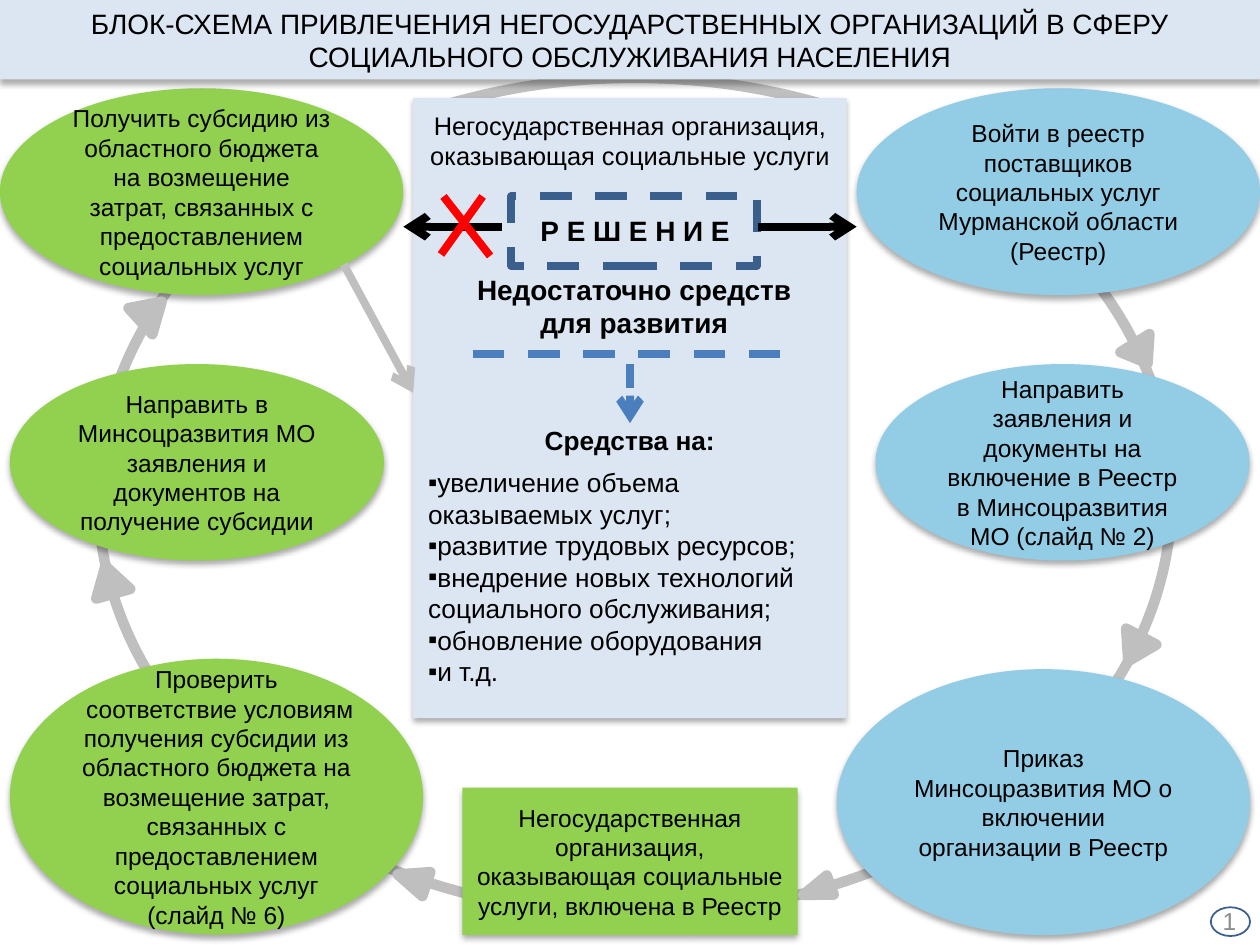
"""Build the flow chart slide on bringing non-state organisations into social services."""
from lxml import etree
from pptx import Presentation
from pptx.dml.color import RGBColor
from pptx.enum.dml import MSO_LINE
from pptx.enum.shapes import MSO_CONNECTOR, MSO_SHAPE
from pptx.enum.text import MSO_ANCHOR, PP_ALIGN
from pptx.oxml.ns import qn
from pptx.util import Cm, Pt

OVAL, RECTANGLE, TRIANGLE = MSO_SHAPE.OVAL, MSO_SHAPE.RECTANGLE, MSO_SHAPE.ISOSCELES_TRIANGLE
STRAIGHT = MSO_CONNECTOR.STRAIGHT
DASH, SHORT_DASH = MSO_LINE.DASH, MSO_LINE.SQUARE_DOT
LEFT, CENTER, RIGHT = PP_ALIGN.LEFT, PP_ALIGN.CENTER, PP_ALIGN.RIGHT
TOP, MIDDLE = MSO_ANCHOR.TOP, MSO_ANCHOR.MIDDLE

FONT = "Arial"
GREEN, SKY, PALE, GREY = "92D050", "93CCE5", "DCE6F2", "BFBFBF"
NAVY, BLUE, RED, BLACK, WHITE = "3A5F8C", "4B7EBC", "FF0000", "000000", "FFFFFF"
INSETS = (0.25, 0.13, 0.25, 0.13)
NARROW_INSETS = (0.1, 0.13, 0.1, 0.13)

TITLE = "БЛОК-СХЕМА ПРИВЛЕЧЕНИЯ НЕГОСУДАРСТВЕННЫХ ОРГАНИЗАЦИЙ В СФЕРУ СОЦИАЛЬНОГО ОБСЛУЖИВАНИЯ НАСЕЛЕНИЯ"
RING = (1.98, 1.57, 21.64, 16.87)
RING_GAPS = [(6.55, 1.98, 4.37, 2.18), (15.67, 1.98, 4.37, 2.18)]
STEPS = [
    (OVAL, (17.27, 1.78, 8.13, 4.17), SKY, INSETS,
     ["Войти в реестр поставщиков социальных услуг Мурманской области", "(Реестр)"]),
    (OVAL, (17.65, 7.34, 7.54, 3.96), SKY, INSETS,
     ["Направить заявления и документы на включение в Реестр в Минсоцразвития МО (слайд № 2)"]),
    (OVAL, (16.87, 13.49, 8.33, 5.36), SKY, INSETS,
     ["Приказ Минсоцразвития МО о включении организации в Реестр"]),
    (RECTANGLE, (9.32, 15.88, 6.76, 2.97), GREEN, INSETS,
     ["Негосударственная организация, оказывающая социальные услуги, включена в Реестр"]),
    (OVAL, (0.2, 13.28, 8.33, 5.56), GREEN, NARROW_INSETS,
     ["Проверить",
      " соответствие условиям получения субсидии из областного бюджета на возмещение затрат, "
      "связанных с предоставлением социальных услуг",
      "(слайд № 6)"]),
    (OVAL, (0.2, 7.34, 7.54, 3.96), GREEN, INSETS,
     ["Направить в Минсоцразвития МО заявления и документов на получение субсидии"]),
    (OVAL, (0, 1.78, 8.13, 4.17), GREEN, INSETS,
     ["Получить субсидию из областного бюджета на возмещение затрат, "
      "связанных с предоставлением социальных услуг"]),
]
ORGANISATION = "Негосударственная организация, оказывающая социальные услуги"
NEEDS = [
    "увеличение объема оказываемых услуг;",
    "развитие трудовых ресурсов;",
    "внедрение новых технологий социального обслуживания;",
    "обновление оборудования",
    "и т.д.",
]
LINES = [
    ((10.11, 4.57), (8.13, 4.57), BLACK, None, True),
    ((8.89, 5.13), (9.73, 3.96), RED, None, False),
    ((9.88, 5.16), (8.94, 3.96), RED, None, False),
    ((15.29, 4.57), (17.27, 4.57), BLACK, None, True),
    ((12.7, 7.34), (12.7, 8.53), BLUE, SHORT_DASH, True),
    ((9.53, 7.14), (15.88, 7.14), BLUE, DASH, False),
    ((6.93, 5.33), (8.33, 7.92), GREY, None, True),
]
RING_ARROWS = [
    ((22.66, 6.88, 0.69, 0.48), 148),
    ((22.53, 12.8, 0.69, 0.56), 208),
    ((16.26, 17.65, 0.41, 0.58), 249.9),
    ((8.05, 17.42, 0.51, 0.61), 288.6),
    ((1.85, 11.4, 0.71, 0.58), 344.2),
    ((2.69, 5.99, 0.71, 0.58), 47.6),
]


def color(value):
    return RGBColor.from_string(value)


def add_shadow(shape):
    effects = shape._element.spPr.find(qn("a:effectLst"))
    shadow = etree.SubElement(effects, qn("a:outerShdw"), blurRad=str(Pt(3.5)),
                              dist=str(Pt(2.2)), dir="5400000", rotWithShape="0")
    tint = etree.SubElement(shadow, qn("a:srgbClr"), val=BLACK)
    etree.SubElement(tint, qn("a:alpha"), val="32000")


def add_figure(page, kind, place, fill=None, line=None, width=0, shadow=False):
    shape = page.shapes.add_shape(kind, *map(Cm, place))
    shape.shadow.inherit = False
    if fill:
        shape.fill.solid()
        shape.fill.fore_color.rgb = color(fill)
    else:
        shape.fill.background()
    if line:
        shape.line.color.rgb = color(line)
        shape.line.width = Pt(width)
    else:
        shape.line.fill.background()
    if shadow:
        add_shadow(shape)
    return shape


def write(shape, lines, size, bold=False, align=CENTER, anchor=MIDDLE, insets=INSETS, ink=BLACK):
    frame = shape.text_frame
    frame.word_wrap = True
    frame.vertical_anchor = anchor
    frame.margin_left, frame.margin_top, frame.margin_right, frame.margin_bottom = map(Cm, insets)
    for index, line in enumerate(lines):
        para = frame.paragraphs[0] if index == 0 else frame.add_paragraph()
        para.alignment = align
        span = para.add_run()
        span.text = line
        span.font.name = FONT
        span.font.size = Pt(size)
        span.font.bold = bold
        span.font.color.rgb = color(ink)
    return frame.paragraphs


def add_label(page, place, lines, size, **style):
    return write(page.shapes.add_textbox(*map(Cm, place)), lines, size, **style)


def add_line(page, start, end, ink, dash, arrow):
    line = page.shapes.add_connector(STRAIGHT, *map(Cm, start + end))
    line.line.color.rgb = color(ink)
    line.line.width = Pt(4.5)
    if dash:
        line.line.dash_style = dash
    properties = line._element.spPr
    if arrow:
        etree.SubElement(properties.find(qn("a:ln")), qn("a:tailEnd"), type="arrow")
    etree.SubElement(properties, qn("a:effectLst"))


def add_needs(page):
    heading, *items = add_label(page, (8.53, 8.13, 8.33, 6.15), ["Средства на:"] + NEEDS, 15,
                                insets=NARROW_INSETS)
    heading.space_after = Pt(6)
    heading.runs[0].font.bold = True
    for para in items:
        para.alignment = LEFT
        properties = para._p.get_or_add_pPr()
        properties.set("marL", "0")
        properties.set("indent", "0")
        etree.SubElement(properties, qn("a:buFont"), typeface=FONT)
        etree.SubElement(properties, qn("a:buChar"), char="▪")


def main():
    deck = Presentation()
    deck.slide_width, deck.slide_height = Cm(25.4), Cm(19.05)
    page = deck.slides.add_slide(deck.slide_layouts[6])

    add_figure(page, OVAL, RING, line=GREY, width=6)
    for place in RING_GAPS:
        add_figure(page, RECTANGLE, place, WHITE)
    for kind, place, fill, insets, lines in STEPS:
        write(add_figure(page, kind, place, fill, shadow=True), lines, 14, insets=insets)

    center = add_figure(page, RECTANGLE, (8.33, 1.98, 8.74, 12.5), PALE, shadow=True)
    write(center, [ORGANISATION], 14.5, anchor=TOP, insets=(0.25, 0.24, 0.25, 0.13))
    add_needs(page)
    add_label(page, (9.32, 5.36, 6.93, 1.63), ["Недостаточно средств для развития"], 16,
              bold=True, anchor=TOP)
    add_label(page, (9.53, 4.17, 6.55, 0.94), ["Р Е Ш Е Н И Е"], 16, bold=True, anchor=TOP)
    decision = add_figure(page, RECTANGLE, (10.31, 3.96, 4.95, 1.4), line=NAVY, width=4.5)
    decision.line.dash_style = DASH

    for line in LINES:
        add_line(page, *line)
    for place, angle in RING_ARROWS:
        add_figure(page, TRIANGLE, place, GREY, GREY, 6).rotation = angle

    write(add_figure(page, RECTANGLE, (0, 0, 25.4, 1.6), PALE, shadow=True), [TITLE], 16)
    add_label(page, (23.62, 18.06, 1.55, 1.02), ["1"], 14, align=RIGHT, ink="8C8C8C")
    add_figure(page, OVAL, (24.41, 18.29, 0.79, 0.58), line=NAVY, width=1)
    deck.save("out.pptx")


if __name__ == "__main__":
    main()
